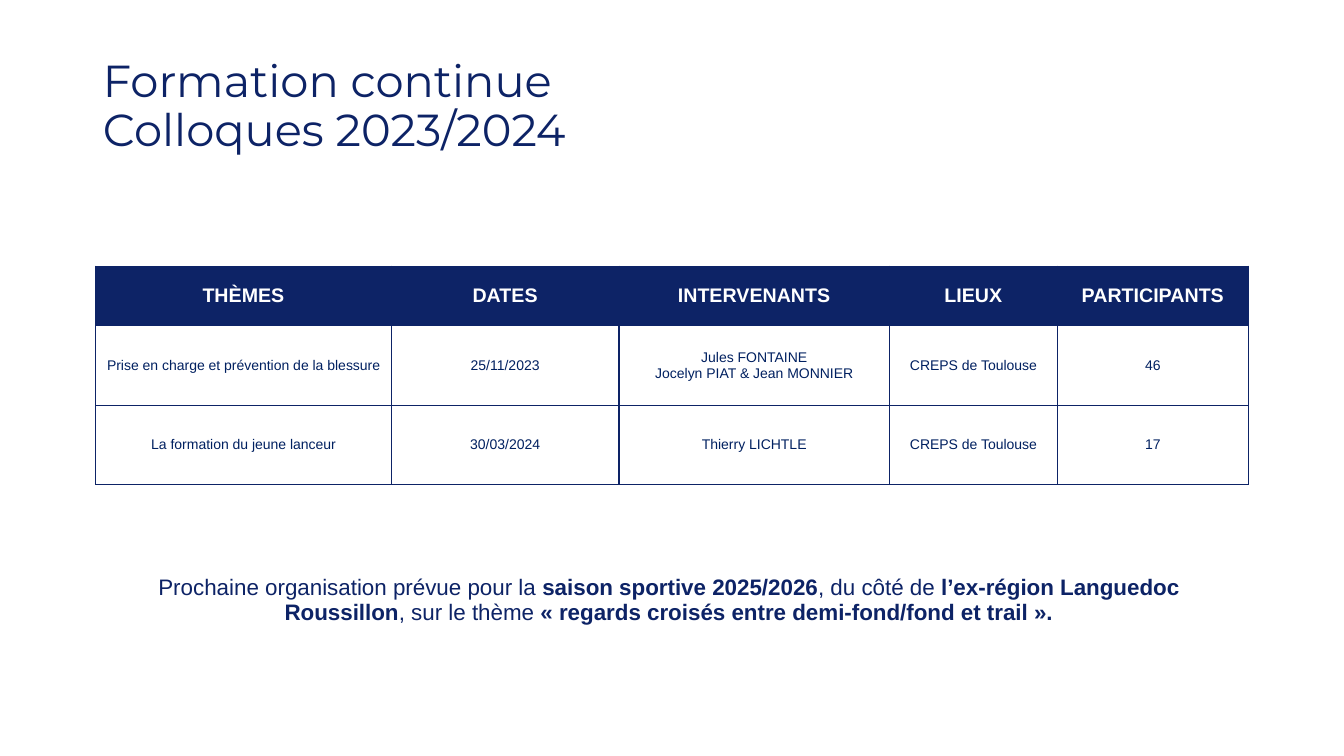
from lxml import etree
from pptx import Presentation
from pptx import util as u
from pptx.dml import color
from pptx.enum import text
from pptx.oxml import ns

PX = 9144  # 100 px to the inch
NAVY, CELL_INK, WHITE = "0D2366", "002060", "FFFFFF"

COLUMNS = {"THÈMES": 293, "DATES": 226, "INTERVENANTS": 268, "LIEUX": 167, "PARTICIPANTS": 189}
ROW_HEIGHTS = [59, 79, 79]
COLLOQUES = [
    ["Prise en charge et prévention de la blessure", "25/11/2023",
     "Jules FONTAINE\nJocelyn PIAT & Jean MONNIER", "CREPS de Toulouse", "46"],
    ["La formation du jeune lanceur", "30/03/2024", "Thierry LICHTLE", "CREPS de Toulouse", "17"],
]
# Pieces alternate between regular and bold
NEXT_EVENT = [
    "Prochaine organisation prévue pour la ", "saison sportive 2025/2026",
    ", du côté de ", "l’ex-région Languedoc Roussillon",
    ", sur le thème ", "«\u00a0regards croisés entre demi-fond/fond et trail\u00a0».",
]


def px(length):
    return u.Emu(length * PX)


def rgb(value):
    return color.RGBColor.from_string(value)


def place(shape, left, top, width, height):
    shape.left, shape.top, shape.width, shape.height = map(px, (left, top, width, height))


def add_text(paragraph, content, *, size, ink=NAVY, font="Arial", bold=False,
             align=text.PP_ALIGN.CENTER, line_spacing=1.0):
    paragraph.alignment = align
    paragraph.line_spacing = line_spacing
    paragraph.space_before = u.Pt(0)
    if "\v" in content:
        paragraph.text = content
    else:
        paragraph.add_run().text = content
    for run in paragraph.runs if "\v" in content else paragraph.runs[-1:]:
        run.font.name, run.font.size, run.font.bold = font, u.Pt(size), bold
        run.font.color.rgb = rgb(ink)


def prepare_frame(shape, anchor):
    frame = shape.text_frame
    frame.word_wrap = True
    frame.auto_size = text.MSO_AUTO_SIZE.NONE
    frame.vertical_anchor = anchor
    return frame


def remove_bullet(paragraph):
    properties = paragraph._p.get_or_add_pPr()
    properties.set("marL", "0")
    properties.set("indent", "0")
    etree.SubElement(properties, ns.qn("a:buNone"))


def set_borders(cell, ink):
    properties = cell._tc.get_or_add_tcPr()
    for position, side in enumerate(("lnL", "lnR", "lnT", "lnB")):
        line = etree.Element(ns.qn(f"a:{side}"), w=str(u.Pt(1)))
        fill = etree.SubElement(line, ns.qn("a:solidFill"))
        etree.SubElement(fill, ns.qn("a:srgbClr"), val=ink)
        properties.insert(position, line)


def fill_cell(cell, content, is_header):
    if is_header:
        cell.fill.solid()
        cell.fill.fore_color.rgb = rgb(NAVY)
    else:
        cell.fill.background()
    set_borders(cell, NAVY)
    cell.vertical_anchor = text.MSO_ANCHOR.MIDDLE
    frame = cell.text_frame
    for number, line in enumerate(content.split("\n")):
        paragraph = frame.add_paragraph() if number else frame.paragraphs[0]
        add_text(paragraph, line, size=14 if is_header else 10,
                 ink=WHITE if is_header else CELL_INK, bold=is_header)


def add_title(slide):
    title = slide.shapes.title
    place(title, 92, 40, 1080, 133)
    frame = prepare_frame(title, text.MSO_ANCHOR.MIDDLE)
    add_text(frame.paragraphs[0], "Formation continue\vColloques 2023/2024", size=32,
             font="Montserrat", align=text.PP_ALIGN.LEFT, line_spacing=0.9)


def add_colloque_table(slide):
    rows = [list(COLUMNS), *COLLOQUES]
    table = slide.shapes.add_table(len(rows), len(COLUMNS), px(95), px(264),
                                   px(sum(COLUMNS.values())), px(sum(ROW_HEIGHTS))).table
    table.horz_banding = False
    for column, width in zip(table.columns, COLUMNS.values()):
        column.width = px(width)
    for row, height in zip(table.rows, ROW_HEIGHTS):
        row.height = px(height)
    for row_number, row in enumerate(rows):
        for column_number, content in enumerate(row):
            fill_cell(table.cell(row_number, column_number), content, row_number == 0)


def add_next_event(slide):
    body = slide.placeholders[1]
    place(body, 92, 567, 1143, 71)
    paragraph = prepare_frame(body, text.MSO_ANCHOR.TOP).paragraphs[0]
    remove_bullet(paragraph)
    for number, piece in enumerate(NEXT_EVENT):
        add_text(paragraph, piece, size=16, bold=number % 2 == 1, line_spacing=0.9)


def main():
    presentation = Presentation()
    presentation.slide_width, presentation.slide_height = px(1333), px(750)
    slide = presentation.slides.add_slide(presentation.slide_layouts[1])
    add_title(slide)
    add_colloque_table(slide)
    add_next_event(slide)
    presentation.save("out.pptx")


if __name__ == "__main__":
    main()
